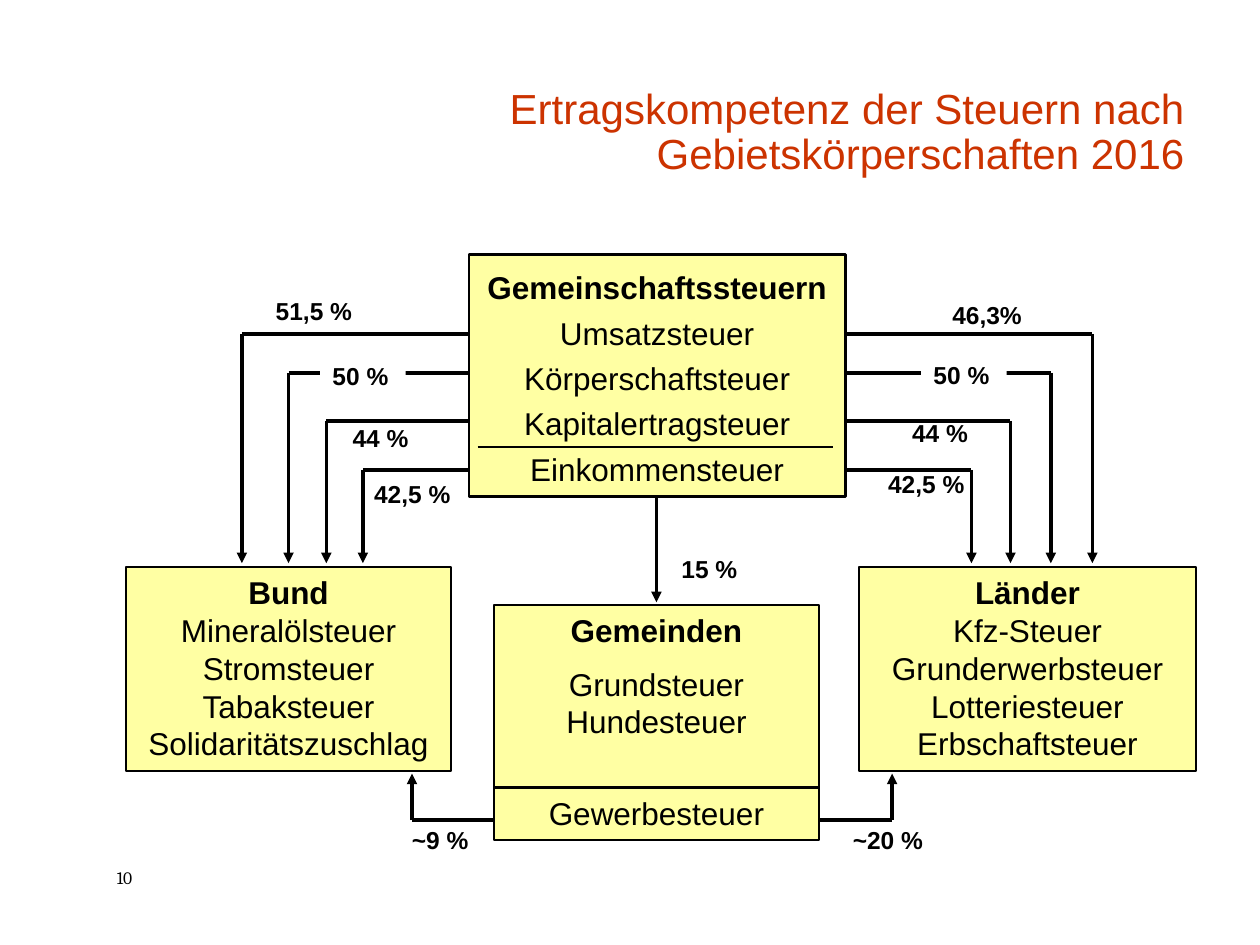
"""Build the slide on how German tax revenue is shared between levels of government."""
from dataclasses import dataclass

from lxml.etree import SubElement
from pptx import Presentation
from pptx.dml.color import RGBColor
from pptx.enum.shapes import MSO_CONNECTOR, MSO_SHAPE
from pptx.enum.text import MSO_ANCHOR, MSO_AUTO_SIZE, PP_ALIGN
from pptx.oxml.ns import qn
from pptx.util import Inches, Pt


@dataclass(frozen=True)
class Theme:
    ink: RGBColor = RGBColor(0x00, 0x00, 0x00)
    accent: RGBColor = RGBColor(0xCC, 0x33, 0x00)
    box: RGBColor = RGBColor(0xFF, 0xFF, 0xA3)
    paper: RGBColor = RGBColor(0xFF, 0xFF, 0xFF)
    font: str = "Arial"
    number_font: str = "Cambria"
    title_size: Pt = Pt(24)
    box_size: Pt = Pt(18)
    label_size: Pt = Pt(14)
    number_size: Pt = Pt(10)
    arrow_width: Pt = Pt(2)
    border_width: Pt = Pt(1.25)


theme = Theme()
frame_format = {
    "word_wrap": True,
    "auto_size": MSO_AUTO_SIZE.NONE,
    "vertical_anchor": MSO_ANCHOR.TOP,
}


def add_line(start, end, width=theme.arrow_width, arrow=False):
    points = [Inches(value) for value in (*start, *end)]
    connector = slide.shapes.add_connector(MSO_CONNECTOR.STRAIGHT, *points)
    connector.line.color.rgb = theme.ink
    connector.line.width = width
    if arrow:
        SubElement(connector.line._get_or_add_ln(), qn("a:tailEnd"), type="triangle")
    SubElement(connector._element.spPr, qn("a:effectLst"))


def write(shape, paragraphs, size, color=theme.ink, name=theme.font, bold_lines=0,
          anchor=MSO_ANCHOR.TOP, **paragraph_format):
    frame = shape.text_frame
    for attribute, value in {**frame_format, "vertical_anchor": anchor}.items():
        setattr(frame, attribute, value)
    written = 0
    for index, lines in enumerate(paragraphs):
        paragraph = frame.add_paragraph() if index else frame.paragraphs[0]
        paragraph.space_before = Pt(9 if index else 0)
        for attribute, value in paragraph_format.items():
            setattr(paragraph, attribute, value)
        for position, line in enumerate(lines):
            if position:
                paragraph.add_line_break()
            run = paragraph.add_run()
            run.text = line
            font_format = {"name": name, "size": size, "bold": written < bold_lines}
            for attribute, value in font_format.items():
                setattr(run.font, attribute, value)
            run.font.color.rgb = color
            written += 1


presentation = Presentation()
presentation.slide_width = Inches(10)
presentation.slide_height = Inches(7.5)
slide = presentation.slides.add_slide(presentation.slide_layouts[5])

title = slide.shapes.title
title_place = {"left": 2.09, "top": 0.42, "width": 7.41, "height": 1.05}
for attribute, value in title_place.items():
    setattr(title, attribute, Inches(value))
write(title, [["Ertragskompetenz der Steuern nach Gebietskörperschaften 2016"]],
      theme.title_size, theme.accent, anchor=MSO_ANCHOR.BOTTOM,
      alignment=PP_ALIGN.RIGHT, line_spacing=0.9)

shared_taxes = [(2.65, 1.92, 8.67), (2.96, 2.29, 8.34), (3.34, 2.59, 8.02), (3.73, 2.88, 7.71)]
trade_tax = (6.51, 3.27, 7.08)
for (level, left, right), tip in [(tax, 4.47) for tax in shared_taxes] + [(trade_tax, 6.14)]:
    add_line((left, level), (right, level))
    for x in (left, right):
        add_line((x, level), (x, tip), arrow=True)
add_line((5.21, 3.93), (5.21, 4.78), arrow=True)

boxes = [
    ((3.72, 2.02, 2.99, 1.92), 1.2, 1,
     [["Gemeinschaftssteuern", "Umsatzsteuer", "Körperschaftsteuer",
       "Kapitalertragsteuer", "Einkommensteuer"]]),
    ((1, 4.5, 2.58, 1.62), 1, 1,
     [["Bund", "Mineralölsteuer", "Stromsteuer", "Tabaksteuer", "Solidaritätszuschlag"]]),
    ((3.92, 4.8, 2.58, 1.47), 1, 1, [["Gemeinden"], ["Grundsteuer", "Hundesteuer"]]),
    ((6.82, 4.5, 2.67, 1.62), 1, 1,
     [["Länder", "Kfz-Steuer", "Grunderwerbsteuer", "Lotteriesteuer", "Erbschaftsteuer"]]),
    ((3.92, 6.25, 2.58, 0.42), 1, 0, [["Gewerbesteuer"]]),
]
for place, spacing, bold_lines, paragraphs in boxes:
    box = slide.shapes.add_shape(MSO_SHAPE.RECTANGLE, *map(Inches, place))
    box.shadow.inherit = False
    box.fill.solid()
    box.fill.fore_color.rgb = theme.box
    box.line.color.rgb = theme.ink
    box.line.width = theme.border_width
    write(box, paragraphs, theme.box_size, bold_lines=bold_lines,
          alignment=PP_ALIGN.CENTER, line_spacing=spacing)
add_line((3.79, 3.55), (6.61, 3.55), theme.border_width)

labels = [
    ("51,5 %", 2.09, 2.3, 1.07, False),
    ("50 %", 2.54, 2.82, 0.68, True),
    ("44 %", 2.7, 3.31, 0.75, False),
    ("42,5 %", 2.87, 3.75, 1.01, False),
    ("46,3%", 7.46, 2.33, 1.03, False),
    ("50 %", 7.31, 2.81, 0.68, True),
    ("44 %", 7.14, 3.27, 0.75, False),
    ("42,5 %", 6.95, 3.67, 0.83, False),
    ("15 %", 5.31, 4.35, 0.83, False),
    ("~9 %", 3.17, 6.5, 0.75, False),
    ("~20 %", 6.67, 6.5, 1.03, False),
]
for text, left, top, width, covers_line in labels:
    label = slide.shapes.add_textbox(Inches(left), Inches(top), Inches(width), Inches(0.33))
    if covers_line:
        label.fill.solid()
        label.fill.fore_color.rgb = theme.paper
    write(label, [[text]], theme.label_size, bold_lines=1)

slide_number = slide.shapes.add_textbox(Inches(0.83), Inches(6.83), Inches(0.67), Inches(0.27))
write(slide_number, [["10"]], theme.number_size, name=theme.number_font)

presentation.save("out.pptx")
